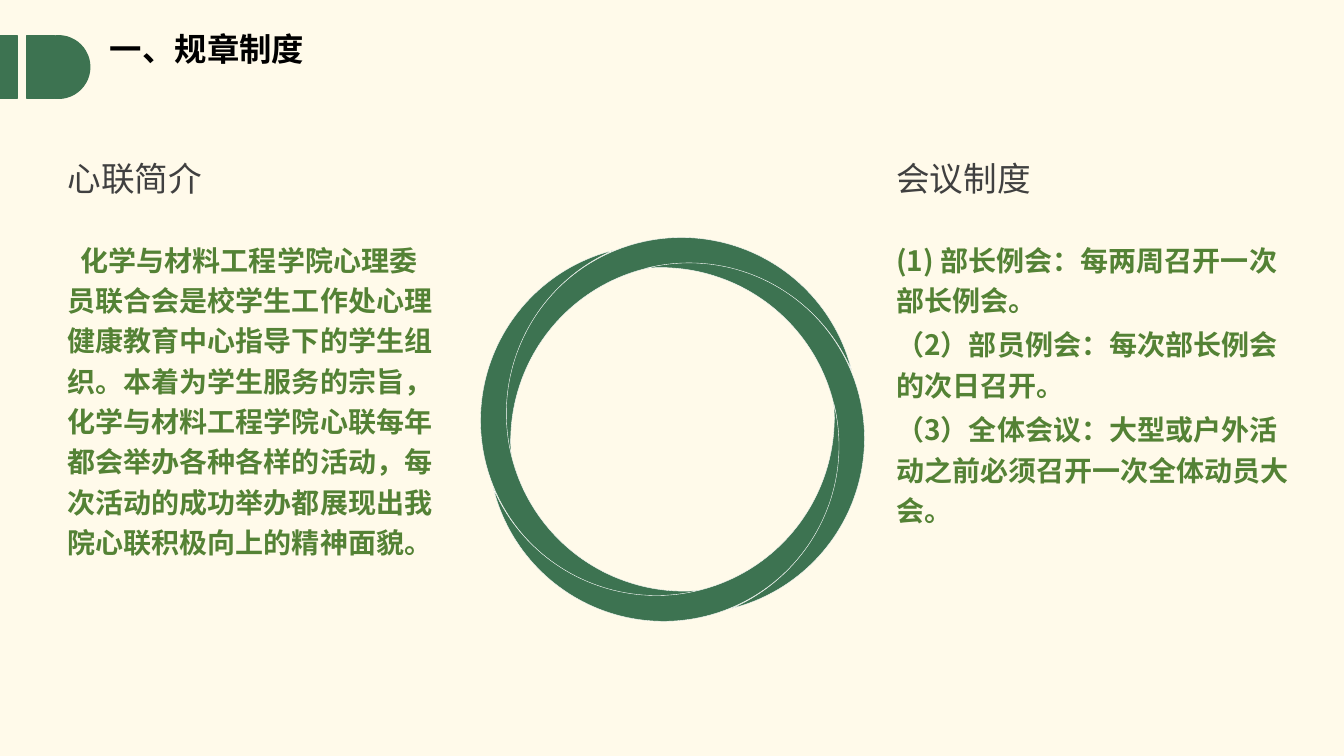
import math
from pptx import Presentation
from pptx import util as u
from pptx.dml.color import RGBColor
from pptx.enum import shapes, text
from pptx.oxml.ns import qn
from lxml import etree

# Content
TITLE = "一、规章制度"
COLUMNS = [
    # left, width, first-line indent, heading, body paragraphs
    (0.67, 3.72, 0.13, "心联简介", [
        "化学与材料工程学院心理委员联合会是校学生工作处心理健康教育中心指导下的学生组织。"
        "本着为学生服务的宗旨，化学与材料工程学院心联每年都会举办各种各样的活动，"
        "每次活动的成功举办都展现出我院心联积极向上的精神面貌。"]),
    (8.89, 3.93, 0, "会议制度", [
        "(1) 部长例会：每两周召开一次部长例会。",
        "（2）部员例会：每次部长例会的次日召开。",
        "（3）全体会议：大型或户外活动之前必须召开一次全体动员大会。"]),
]

# Style
FONT = "Noto Sans CJK SC"
CREAM = RGBColor(0xFF, 0xFA, 0xEA)
GREEN = RGBColor(0x3D, 0x73, 0x51)
LEAF = RGBColor(0x54, 0x82, 0x35)
GREY = RGBColor(0x40, 0x40, 0x40)
BLACK = RGBColor(0, 0, 0)
WHITE = RGBColor(0xFF, 0xFF, 0xFF)

# Geometry in inches
TAB_TOP, TAB_HEIGHT = 0.355, 0.62
COLUMN_TOP, COLUMN_HEIGHT = 1.49, 4.08
RING_CENTRE = (6.67, 4.26)
MOON_SIZE = (1.74, 3.48)
MOON_OFFSET = 1.015
MOON_TILT = 345.9

presentation = Presentation()
presentation.slide_width, presentation.slide_height = u.Inches(13.33), u.Inches(7.5)
slide = presentation.slides.add_slide(presentation.slide_layouts[5])
slide.background.fill.solid()
slide.background.fill.fore_color.rgb = CREAM


def add_green(kind, left, top, width, height, line_colour=GREEN, line_width=1):
    shape = slide.shapes.add_shape(kind, *map(u.Inches, (left, top, width, height)))
    shape.shadow.inherit = False
    shape.fill.solid()
    shape.fill.fore_color.rgb = GREEN
    shape.line.color.rgb = line_colour
    shape.line.width = u.Pt(line_width)
    return shape


def style_paragraph(paragraph, words, size, colour, bold, before, spacing=1.2):
    paragraph.text = words
    paragraph.alignment = text.PP_ALIGN.LEFT
    paragraph.line_spacing = spacing
    paragraph.space_before = u.Pt(before)
    # East Asian glyphs need their own font entry
    for font in (paragraph.font, paragraph.runs[0].font):
        font.size, font.bold, font.name = u.Pt(size), bold, FONT
        font.color.rgb = colour
    properties = paragraph.runs[0].font._element
    etree.SubElement(properties, qn("a:ea")).set("typeface", FONT)


# Tab at the left of the title
MSO = shapes.MSO_SHAPE
for kind, left, width in [(MSO.RECTANGLE, 0, 0.17), (MSO.RECTANGLE, 0.27, 0.27),
                          (MSO.OVAL, 0.27, 0.62)]:
    add_green(kind, left, TAB_TOP, width, TAB_HEIGHT)

# Title
title = slide.shapes.title
title.left, title.top, title.width, title.height = map(u.Inches, (0.99, 0.27, 8.62, 0.47))
title.text_frame.vertical_anchor = text.MSO_ANCHOR.MIDDLE
title.text_frame.auto_size = text.MSO_AUTO_SIZE.NONE
style_paragraph(title.text_frame.paragraphs[0], TITLE, 23.1, BLACK, True, 0, 0.9)

# Ring of four moons, each a quarter turn on: top, left, right, bottom
moon_width, moon_height = MOON_SIZE
for quarter in (1, 0, 2, 3):
    angle = math.radians(173 + 90 * quarter)
    moon = add_green(MSO.MOON,
                     RING_CENTRE[0] + MOON_OFFSET * math.cos(angle) - moon_width / 2,
                     RING_CENTRE[1] + MOON_OFFSET * math.sin(angle) - moon_height / 2,
                     moon_width, moon_height, WHITE, 0.25)
    moon.adjustments[0] = 0.152
    moon.rotation = (MOON_TILT + 90 * quarter) % 360

# Text columns
for left, width, indent, heading, body in COLUMNS:
    box = slide.shapes.add_textbox(*map(u.Inches, (left, COLUMN_TOP, width, COLUMN_HEIGHT)))
    frame = box.text_frame
    frame.word_wrap = True
    frame.margin_left = frame.margin_right = frame.margin_top = frame.margin_bottom = 0
    style_paragraph(frame.paragraphs[0], heading, 24, GREY, False, 3)
    for number, words in enumerate(body):
        paragraph = frame.add_paragraph()
        style_paragraph(paragraph, words, 20, LEAF, True, 3 if number else 27)
        paragraph._p.get_or_add_pPr().set("indent", str(u.Inches(indent)))

presentation.save("out.pptx")
